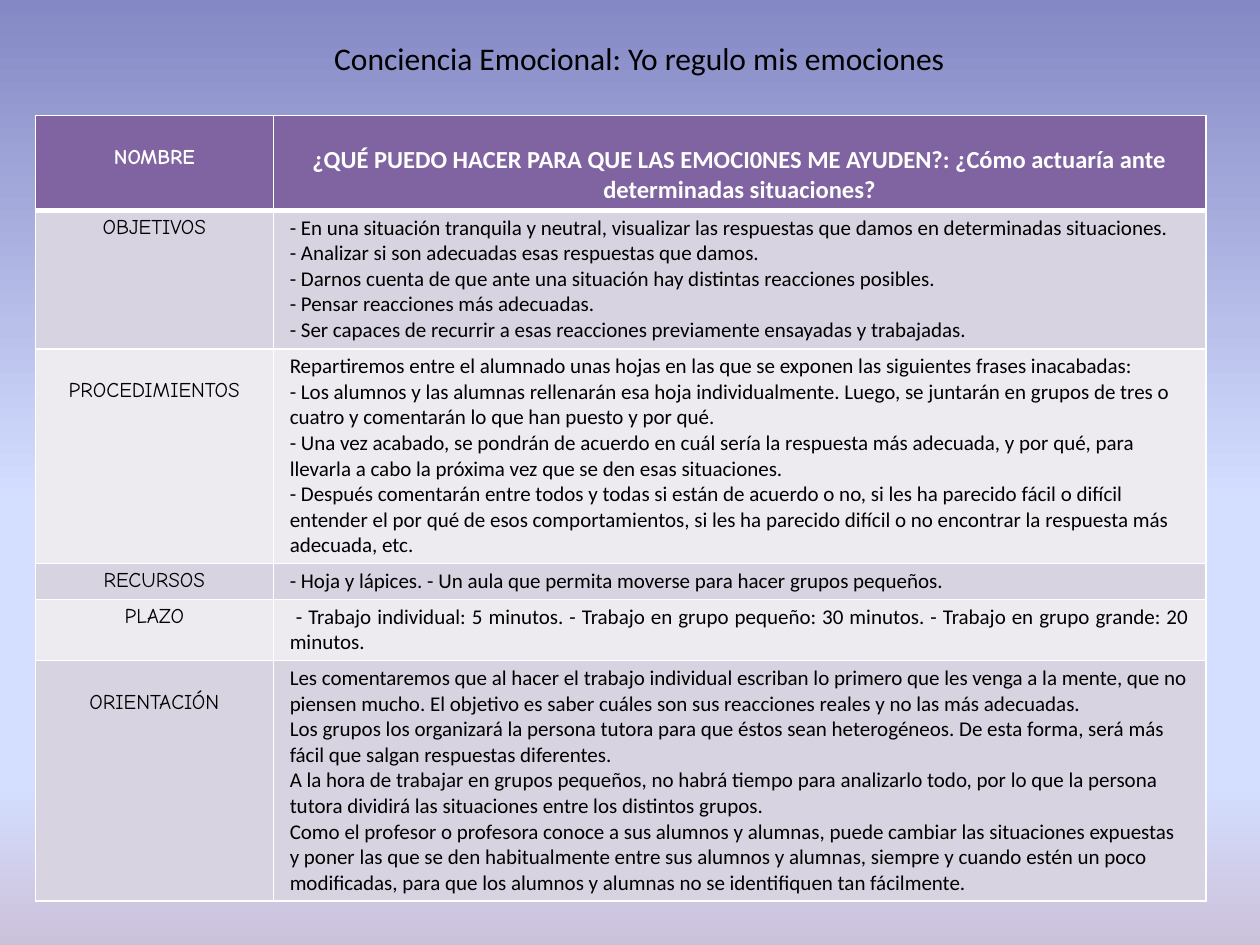
import pptx
import pptx.dml.color
import pptx.enum.text
import pptx.oxml.ns
import pptx.util
from lxml import etree

WIDE, HIGH = 10, 7.5
SANS, COMIC = "Calibri", "Comic Neue"
DARK, LIGHT, HEAD = "D8D3E0", "EDEAF0", "8064A2"
BLACK, WHITE = "000000", "FFFFFF"
LINE = 0.2
PAD = 0.04
ALIGN = pptx.enum.text.PP_ALIGN
STOPS = [(0, "8488C4"), (53, "D4DEFF"), (83, "D4DEFF"), (100, "CCC1DA")]
COLS = [1.89, 7.4]
ROWS = [0.75, 1.1, 1.7, 0.28, 0.48, 1.9]
DROPS = [1, 0, 1, 0, 0, 1]
TITLE = "Conciencia Emocional: Yo regulo mis emociones"
CELLS = [
    ("NOMBRE", [
        "¿QUÉ PUEDO HACER PARA QUE LAS EMOCI0NES ME AYUDEN?: ¿Cómo actuaría ante determinadas situaciones?",
    ]),
    ("OBJETIVOS", [
        "- En una situación tranquila y neutral, visualizar las respuestas que damos en determinadas situaciones.",
        "- Analizar si son adecuadas esas respuestas que damos.",
        "- Darnos cuenta de que ante una situación hay distintas reacciones posibles.",
        "- Pensar reacciones más adecuadas.",
        "- Ser capaces de recurrir a esas reacciones previamente ensayadas y trabajadas.",
    ]),
    ("PROCEDIMIENTOS", [
        "Repartiremos entre el alumnado unas hojas en las que se exponen las siguientes frases inacabadas:",
        "- Los alumnos y las alumnas rellenarán esa hoja individualmente. Luego, se juntarán en grupos de tres o "
        "cuatro y comentarán lo que han puesto y por qué.",
        "- Una vez acabado, se pondrán de acuerdo en cuál sería la respuesta más adecuada, y por qué, para "
        "llevarla a cabo la próxima vez que se den esas situaciones.",
        "- Después comentarán entre todos y todas si están de acuerdo o no, si les ha parecido fácil o difícil "
        "entender el por qué de esos comportamientos, si les ha parecido difícil o no encontrar la respuesta más "
        "adecuada, etc.",
    ]),
    ("RECURSOS", [
        "- Hoja y lápices. - Un aula que permita moverse para hacer grupos pequeños.",
    ]),
    ("PLAZO", [
        " - Trabajo individual: 5 minutos. - Trabajo en grupo pequeño: 30 minutos. - Trabajo en grupo grande: 20 "
        "minutos.",
    ]),
    ("ORIENTACIÓN", [
        "Les comentaremos que al hacer el trabajo individual escriban lo primero que les venga a la mente, que no "
        "piensen mucho. El objetivo es saber cuáles son sus reacciones reales y no las más adecuadas.",
        "Los grupos los organizará la persona tutora para que éstos sean heterogéneos. De esta forma, será más "
        "fácil que salgan respuestas diferentes.",
        "A la hora de trabajar en grupos pequeños, no habrá tiempo para analizarlo todo, por lo que la persona "
        "tutora dividirá las situaciones entre los distintos grupos.",
        "Como el profesor o profesora conoce a sus alumnos y alumnas, puede cambiar las situaciones expuestas "
        "y poner las que se den habitualmente entre sus alumnos y alumnas, siempre y cuando estén un poco "
        "modificadas, para que los alumnos y alumnas no se identifiquen tan fácilmente.",
    ]),
]


def inch(num):
    """Return a length in inches."""
    return pptx.util.Inches(num)


def paint(item, tone):
    """Give a fill or font a solid hex colour."""
    if hasattr(item, "solid"):
        item.solid()
        item.fore_color.rgb = pptx.dml.color.RGBColor.from_string(tone)
    else:
        item.color.rgb = pptx.dml.color.RGBColor.from_string(tone)


def node(root, tag, **attrs):
    """Add a drawing element below root."""
    return etree.SubElement(root, pptx.oxml.ns.qn("a:" + tag), **attrs)


def shade(slide):
    """Fill the background with the four-stop gradient."""
    fill = slide.background.fill
    fill.gradient()
    fill.gradient_angle = 270
    stops = slide.element.find(".//" + pptx.oxml.ns.qn("a:gsLst"))
    for old in list(stops):
        stops.remove(old)
    for pos, tone in STOPS:
        node(node(stops, "gs", pos=str(pos * 1000)), "srgbClr", val=tone)


def write(frame, lines, face, size, tone, align, bold=False):
    """Write one paragraph per line in a shared format."""
    frame.text = "\n".join(lines)
    for para in frame.paragraphs:
        para.alignment = align
        para.font.name, para.font.size = face, pptx.util.Pt(size)
        para.font.bold = bold
        paint(para.font, tone)


def edge(cell, row):
    """Draw white borders, thick between header and body."""
    props = cell._tc.get_or_add_tcPr()
    thick = {0: "lnB", 1: "lnT"}.get(row)
    for tag in ("lnL", "lnR", "lnT", "lnB"):
        width = pptx.util.Pt(3 if tag == thick else 1)
        line = node(props, tag, w=str(width))
        node(node(line, "solidFill"), "srgbClr", val=WHITE)


def dress(cell, row, drop):
    """Set the margins, borders and fill of a cell."""
    cell.margin_left = cell.margin_right = inch(0.13)
    cell.margin_top = inch(PAD + drop * LINE)
    cell.margin_bottom = inch(PAD)
    edge(cell, row)
    paint(cell.fill, HEAD if row == 0 else DARK if row % 2 else LIGHT)


def head(slide):
    """Place the title."""
    title = slide.shapes.title
    title.left, title.top = inch(WIDE * 0.232), inch(HIGH * 0.035)
    title.width, title.height = inch(WIDE * 0.551), inch(HIGH * 0.053)
    write(title.text_frame, [TITLE], SANS, 18, BLACK, ALIGN.CENTER)
    title.text_frame.auto_size = pptx.enum.text.MSO_AUTO_SIZE.NONE


def grid(slide):
    """Build the activity table."""
    table = slide.shapes.add_table(
        len(ROWS), len(COLS), inch(WIDE * 0.028), inch(HIGH * 0.122),
        inch(sum(COLS)), inch(sum(ROWS))).table
    for col, width in zip(table.columns, COLS):
        col.width = inch(width)
    for row, (name, lines) in enumerate(CELLS):
        table.rows[row].height = inch(ROWS[row])
        label, body = table.cell(row, 0), table.cell(row, 1)
        top = row == 0
        tone = WHITE if top else BLACK
        align = ALIGN.CENTER if top else ALIGN.JUSTIFY if name == "PLAZO" else ALIGN.LEFT
        dress(label, row, DROPS[row])
        dress(body, row, int(top))
        write(label.text_frame, [name], COMIC, 12, tone, ALIGN.CENTER, top)
        write(body.text_frame, lines, SANS, 14 if top else 12, tone, align, top)


def main():
    """Build and save the slide."""
    deck = pptx.Presentation()
    deck.slide_width, deck.slide_height = inch(WIDE), inch(HIGH)
    slide = deck.slides.add_slide(deck.slide_layouts[5])
    shade(slide)
    grid(slide)
    head(slide)
    deck.save("out.pptx")


if __name__ == "__main__":
    main()
